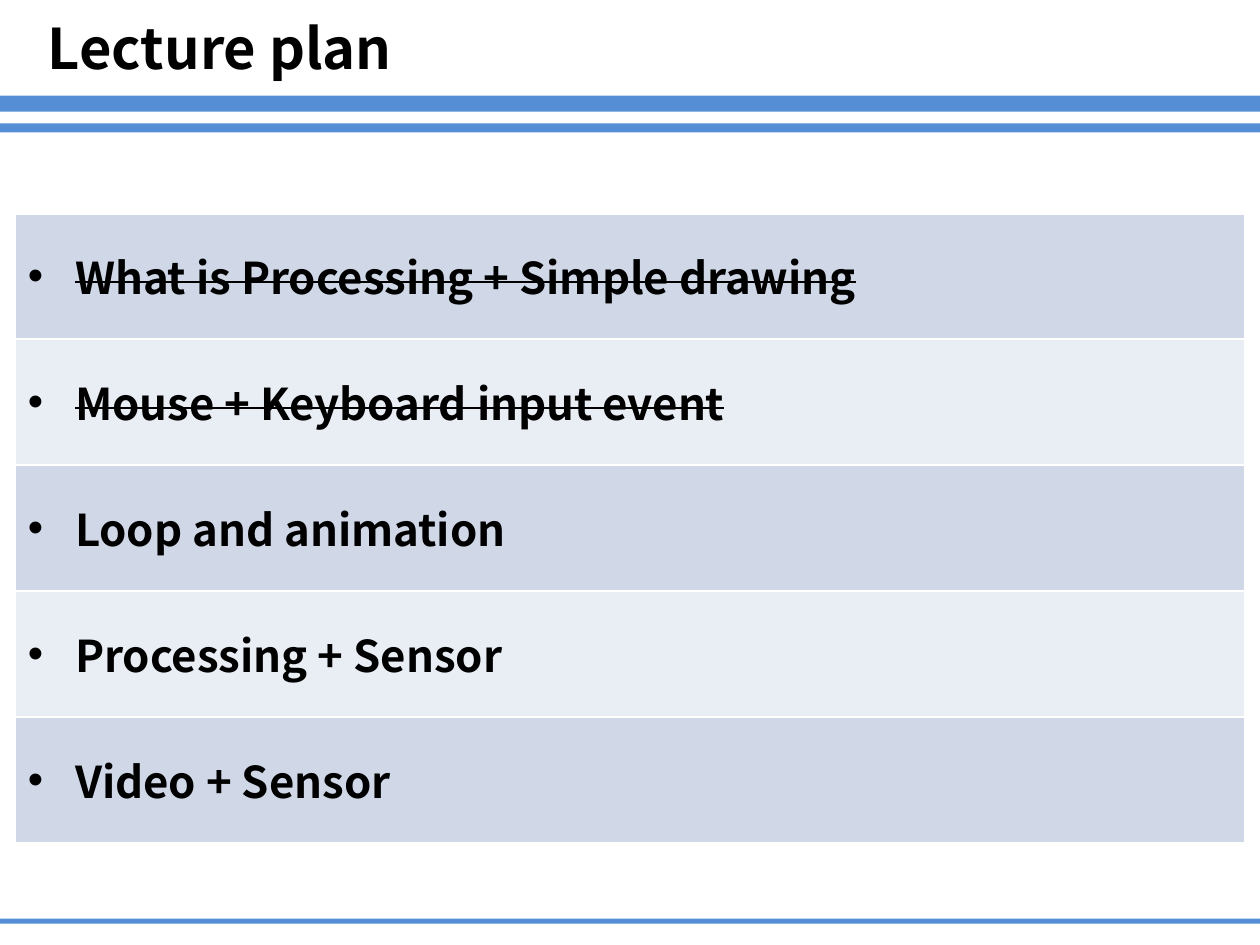
from lxml import etree
from pptx import Presentation
from pptx.dml.color import RGBColor
from pptx.enum.shapes import MSO_SHAPE as Shape
from pptx.enum.text import MSO_ANCHOR as Anchor, MSO_AUTO_SIZE as AutoSize, PP_ALIGN as Align
from pptx.oxml import parse_xml
from pptx.oxml.ns import nsdecls, qn
from pptx.util import Cm, Pt

COLORS = {"bar": "558ED5", "text": "000000", "border": "FFFFFF",
          "odd_row": "D0D8E8", "even_row": "E9EDF4"}
FONT = "Noto Sans CJK KR"


def write_text(para, text, size, strike=False):
    span = para.add_run()
    span.text = text
    span.font.name = FONT
    span.font.size = Pt(size)
    span.font.bold = True
    span.font.color.rgb = RGBColor.from_string(COLORS["text"])
    if strike:
        span._r.get_or_add_rPr().set("strike", "sngStrike")


def set_borders(cell, **widths):
    """Draw the cell's borders; widths in points by side (L, R, T, B)."""
    for side, width in widths.items():
        cell._tc.get_or_add_tcPr().append(parse_xml(
            f'<a:ln{side} {nsdecls("a")} w="{Pt(width)}"><a:solidFill>'
            f'<a:srgbClr val="{COLORS["border"]}"/></a:solidFill></a:ln{side}>'))


deck = Presentation()
deck.slide_width, deck.slide_height = Cm(25.4), Cm(19.05)
page = deck.slides.add_slide(deck.slide_layouts[5])

# Bars under the title and at the foot
for top, height in [(1.93, 0.32), (2.49, 0.18), (18.52, 0.1)]:
    bar = page.shapes.add_shape(Shape.RECTANGLE, 0, Cm(top), deck.slide_width, Cm(height))
    bar.shadow.inherit = False
    bar.fill.solid()
    bar.fill.fore_color.rgb = RGBColor.from_string(COLORS["bar"])
    bar.line.fill.background()

# Title
title = page.shapes.title
title.left, title.top, title.width, title.height = Cm(0.71), Cm(0.13), Cm(8.08), Cm(1.63)
frame = title.text_frame
frame.auto_size = AutoSize.NONE
frame.word_wrap = False
frame.vertical_anchor = Anchor.MIDDLE
frame.margin_top = frame.margin_bottom = 0
frame.paragraphs[0].alignment = Align.LEFT
write_text(frame.paragraphs[0], "Lecture plan", 32)

# Lecture table: an empty header row, then one row per lecture
lectures = [
    ("What is Processing + Simple drawing", True),
    ("Mouse + Keyboard input event", True),
    ("Loop and animation", False),
    ("Processing + Sensor", False),
    ("Video + Sensor", False),
]
header_height, row_height = Cm(1.37), Cm(2.54)
table = page.shapes.add_table(
    len(lectures) + 1, 1, Cm(0.31), Cm(2.92), Cm(24.79),
    header_height + row_height * len(lectures)).table
table.first_row = table.horz_banding = False
table.rows[0].height = header_height
header = table.cell(0, 0)
set_borders(header, L=1, R=1, T=1, B=3)
header.fill.background()

for number, (lecture, done) in enumerate(lectures, start=1):
    table.rows[number].height = row_height
    cell = table.cell(number, 0)
    set_borders(cell, L=1, R=1, T=3 if number == 1 else 1, B=1)
    cell.fill.solid()
    cell.fill.fore_color.rgb = RGBColor.from_string(
        COLORS["odd_row" if number % 2 else "even_row"])
    cell.vertical_anchor = Anchor.MIDDLE
    para = cell.text_frame.paragraphs[0]
    write_text(para, lecture, 25, strike=done)
    properties = para._p.get_or_add_pPr()
    properties.set("marL", str(Cm(0.95)))
    properties.set("indent", str(-Cm(0.95)))
    etree.SubElement(properties, qn("a:buFont")).set("typeface", "Arial")
    etree.SubElement(properties, qn("a:buChar")).set("char", "•")

deck.save("out.pptx")
